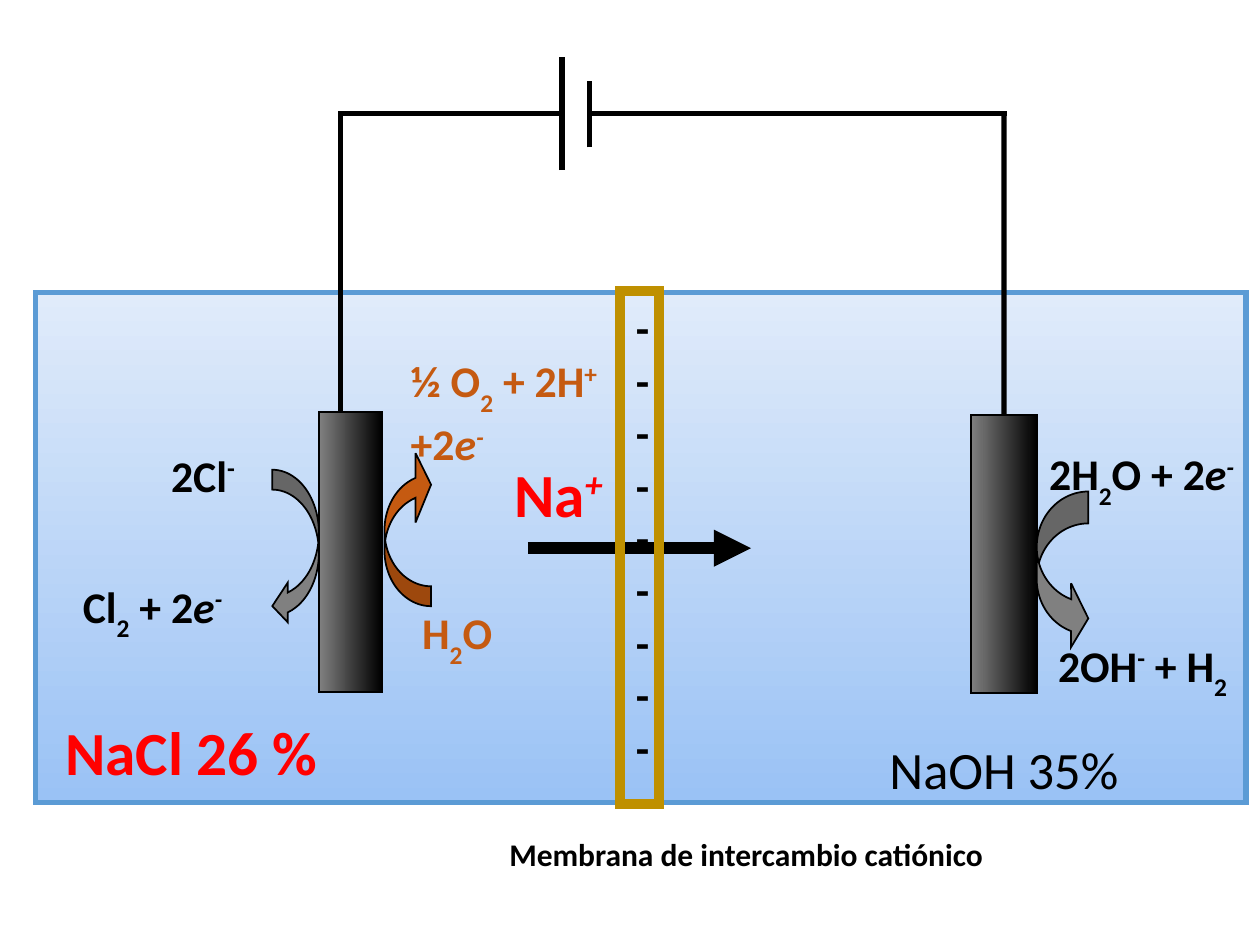
from lxml.etree import SubElement
from pptx import Presentation
from pptx.dml.color import RGBColor
from pptx.enum.shapes import MSO_CONNECTOR, MSO_SHAPE
from pptx.enum.text import MSO_AUTO_SIZE, PP_ALIGN
from pptx.oxml.ns import qn
from pptx.util import Cm, Pt

COLORS = {
    "black": "000000",
    "gray": "808080",
    "red": "FF0000",
    "orange": "C55A11",
    "gold": "BF9000",
    "tank_line": "5B9BD5",
    "tank_top": "E0EBFA",
    "tank_bottom": "9AC2F5",
}
BASELINES = {"_": "-33000", "^": "33000"}
LINE_BREAK = ("", "break")


def color(name):
    return RGBColor.from_string(COLORS[name])


def add_shape(slide, kind, box, line="black", line_width=1, fill=None, gradient=None, angle=0):
    shape = slide.shapes.add_shape(kind, *map(Cm, box))
    shape.shadow.inherit = False
    shape.line.color.rgb = color(line)
    shape.line.width = Pt(line_width)
    SubElement(shape.line._get_or_add_ln(), qn("a:miter"), lim="800000")
    if gradient:
        shape.fill.gradient()
        shape.fill.gradient_angle = angle
        for stop, name in zip(shape.fill.gradient_stops, gradient):
            stop.color.rgb = color(name)
    elif fill:
        shape.fill.solid()
        shape.fill.fore_color.rgb = color(fill)
    else:
        shape.fill.background()
    return shape


def add_electrode(slide, box):
    return add_shape(slide, MSO_SHAPE.RECTANGLE, box, gradient=("gray", "black"))


def add_curved_arrow(slide, kind, box, adjustments, fill="gray"):
    arrow = add_shape(slide, kind, box, fill=fill)
    for index, value in enumerate(adjustments):
        arrow.adjustments[index] = value
    return arrow


def add_line(slide, start, end, width=3):
    line = slide.shapes.add_connector(MSO_CONNECTOR.STRAIGHT, *map(Cm, start + end))
    line.line.color.rgb = color("black")
    line.line.width = Pt(width)
    SubElement(line._element.spPr, qn("a:effectLst"))
    return line


def add_text(slide, box, runs, size=25, font_color="black", bold=True, centered=False):
    text_box = slide.shapes.add_textbox(*map(Cm, box))
    frame = text_box.text_frame
    frame.word_wrap = not centered
    frame.auto_size = MSO_AUTO_SIZE.SHAPE_TO_FIT_TEXT
    paragraph = frame.paragraphs[0]
    paragraph.alignment = PP_ALIGN.CENTER if centered else PP_ALIGN.LEFT
    font = paragraph.font
    font.name, font.size, font.bold = "Calibri", Pt(size), bold
    font.color.rgb = color(font_color)
    for text, style in runs:
        if style == "break":
            paragraph.add_line_break()
            continue
        run = paragraph.add_run()
        run.text = text
        if "i" in style:
            run.font.italic = True
        for mark, baseline in BASELINES.items():
            if mark in style:
                run._r.get_or_add_rPr().set("baseline", baseline)


def draw_anode(slide, left, top):
    add_electrode(slide, (left + 5.72, top + 2.42, 1.27, 5.64))
    add_curved_arrow(slide, MSO_SHAPE.CURVED_LEFT_ARROW,
                     (left + 4.78, top + 3.58, 0.94, 3.15), (0.427, 0.854, 0.333))
    water_arrow = add_curved_arrow(slide, MSO_SHAPE.CURVED_LEFT_ARROW,
                                   (left + 7.04, top + 3.18, 0.94, 3.15),
                                   (0.427, 1.488, 0.333), "orange")
    water_arrow.rotation = 180
    add_text(slide, (left + 2.49, top + 3.03, 2.84, 1.32), [("2Cl", ""), ("-", "^")])
    add_text(slide, (left + 0.71, top + 5.67, 5.69, 1.32),
             [("Cl", ""), ("2", "_"), (" + 2", ""), ("e", "i"), ("-", "i^")])
    add_text(slide, (left + 7.55, top + 6.2, 2.84, 1.32),
             [("H", ""), ("2", "_"), ("O", "")], font_color="orange")
    add_text(slide, (left + 7.32, top + 1.12, 5.69, 2.39),
             [("½ O", ""), ("2", "_"), (" + 2H", ""), ("+", "^"), LINE_BREAK,
              ("+2", ""), ("e", "i"), ("-", "i^")], font_color="orange")
    add_text(slide, (left + 0.23, top + 8.38, 5.84, 1.75),
             [("NaCl 26 % ", "")], 35, "red", centered=True)


def draw_cathode(slide, left, top):
    electrode = add_electrode(slide, (left + 6.29, top + 2.47, 1.32, 5.61))
    add_curved_arrow(slide, MSO_SHAPE.CURVED_RIGHT_ARROW,
                     (left + 7.61, top + 4.02, 1.04, 3.2), (0.618, 1.236, 0.333))
    add_text(slide, (left + 7.61, top + 3, 4.98, 1.24),
             [("2H", ""), ("2", "_"), ("O + 2", ""), ("e", "i"), ("-", "i^")])
    add_text(slide, (left + 7.79, top + 6.86, 4.24, 1.24),
             [("2OH", ""), ("-", "^"), (" + H", ""), ("2", "_")])
    add_text(slide, (left + 4.36, top + 8.84, 5.18, 1.55),
             [("NaOH 35%", "")], 30, bold=False, centered=True)
    return electrode


def draw_circuit(slide, left, top, width, height, cathode):
    right, bottom, wire = left + width, top + height, top + 1.15
    long_plate, short_plate = left + 4.47, left + 5.03
    add_line(slide, (left, bottom), (left, top + 1.1))
    cathode_wire = add_line(slide, (right, bottom), (right, wire))
    cathode_wire.begin_connect(cathode, 0)
    add_line(slide, (left, wire), (long_plate, wire))
    add_line(slide, (short_plate, wire), (right + 0.05, wire))
    add_line(slide, (long_plate, top + 2.29), (long_plate, top))
    add_line(slide, (short_plate, top + 1.83), (short_plate, top + 0.49))


def draw_membrane(slide, left, top, width, height):
    arrow_level = top + 5.18
    arrow = add_line(slide, (left - 1.86, arrow_level), (left + 2.64, arrow_level), 7.09)
    SubElement(arrow.line._get_or_add_ln(), qn("a:tailEnd"), type="triangle")
    add_text(slide, (left + 0.07, top + 0.07, width - 0.15, height - 0.15), [("-" * 10, "")])
    add_shape(slide, MSO_SHAPE.RECTANGLE, (left, top, width, height), "gold", 6)
    add_text(slide, (left - 2.54, top + 3.2, 2.59, 1.65),
             [("Na", ""), ("+", "i^")], 35, "red", centered=True)
    add_text(slide, (left - 2.52, top + 10.84, 10.13, 1.02),
             [("Membrana de intercambio catiónico", "")], 18, centered=True)


def main():
    presentation = Presentation()
    presentation.slide_width, presentation.slide_height = Cm(25.4), Cm(19.05)
    slide = presentation.slides.add_slide(presentation.slide_layouts[6])
    tank = (0.71, 5.89, 24.41, 10.29)
    add_shape(slide, MSO_SHAPE.RECTANGLE, tank, "tank_line", 3,
              gradient=("tank_top", "tank_bottom"), angle=270)
    draw_anode(slide, *tank[:2])
    cathode = draw_cathode(slide, 13.29, tank[1])
    draw_circuit(slide, 6.86, 1.14, 13.38, 7.17, cathode)
    draw_membrane(slide, 12.5, 5.87, 0.79, 10.34)
    presentation.save("out.pptx")


if __name__ == "__main__":
    main()
